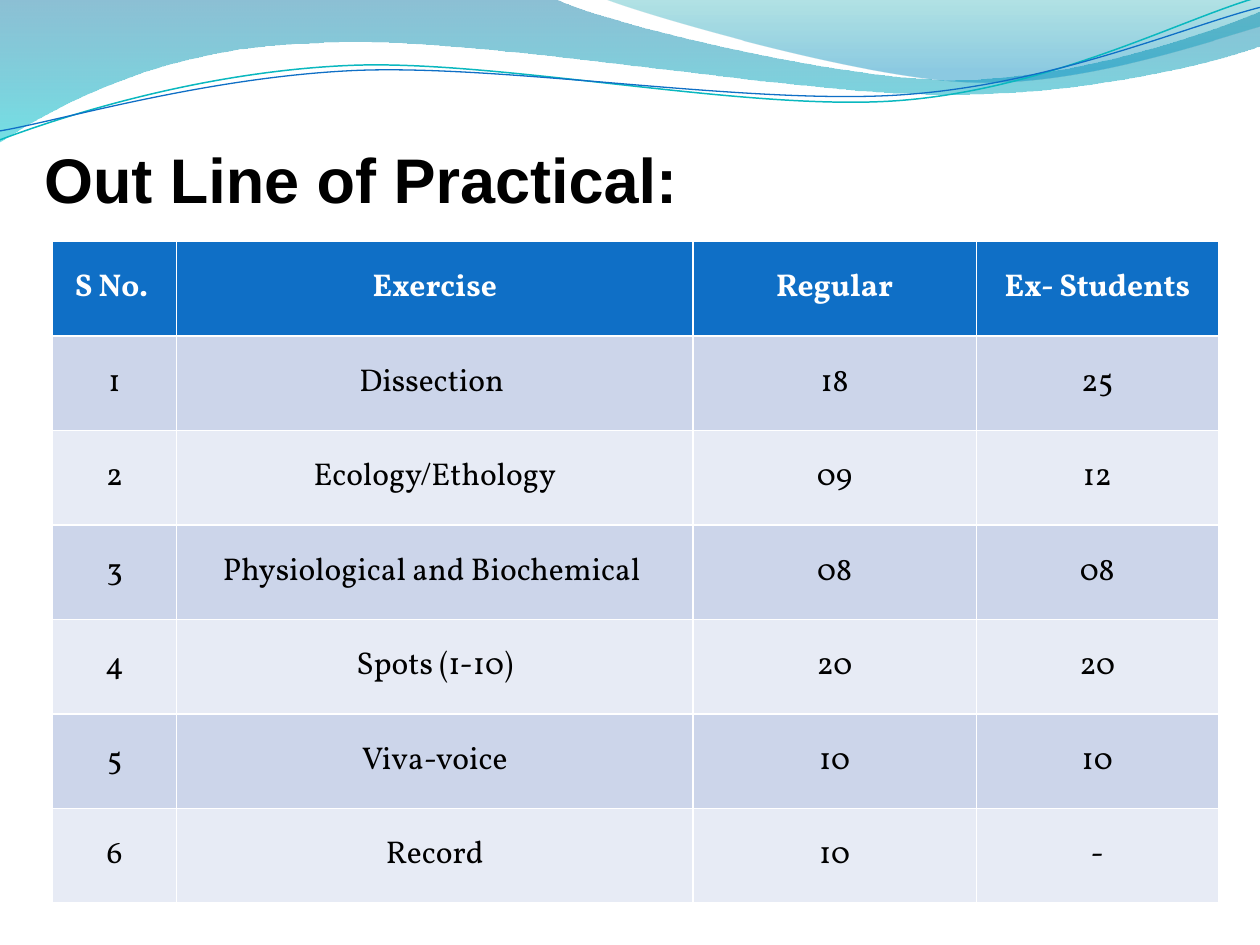
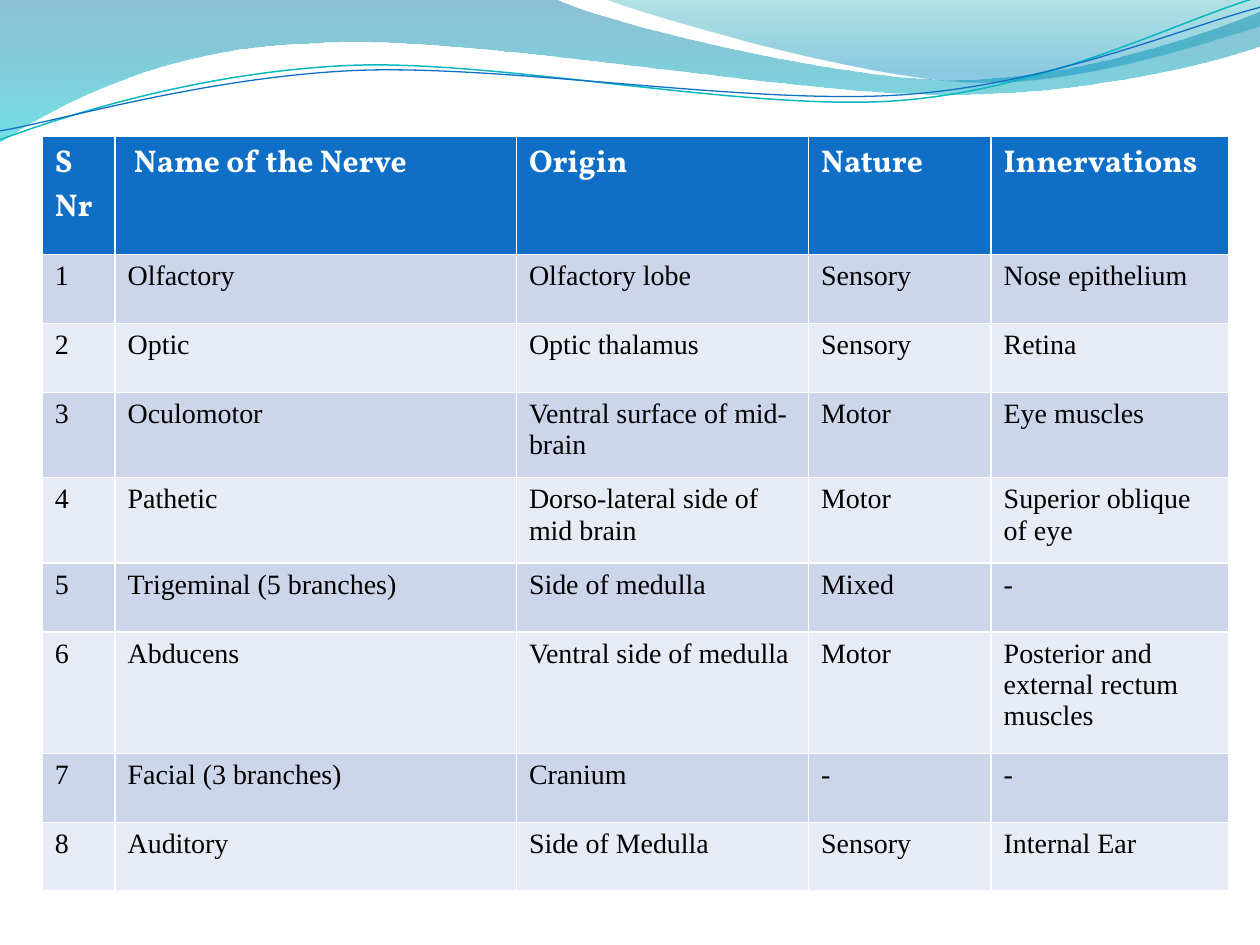
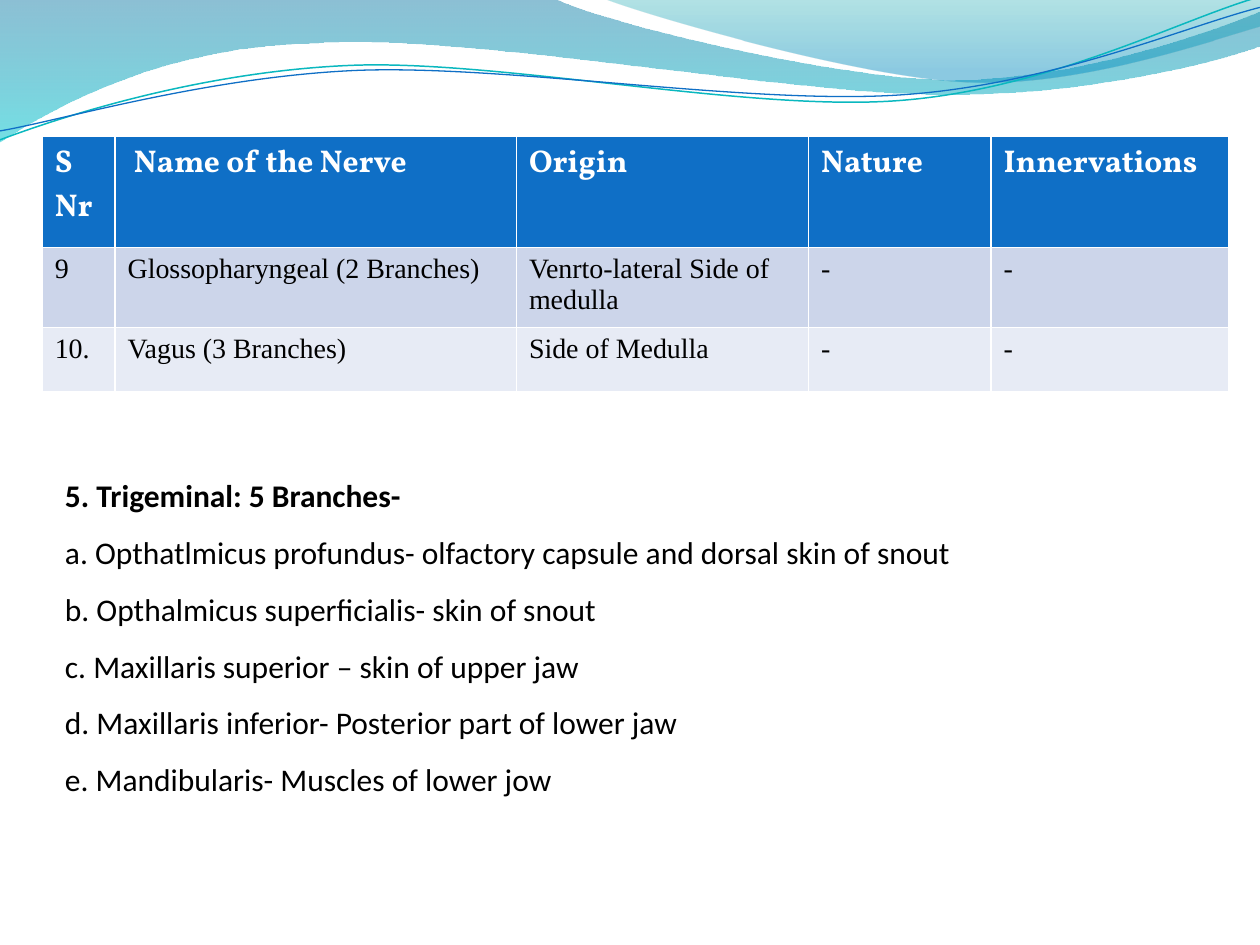
"""Builds three zoology practical slides: a marks outline and two cranial nerve tables."""
from pptx import Presentation
from pptx.dml.color import RGBColor
from pptx.enum.text import MSO_ANCHOR as Anchor, PP_ALIGN as Align
from pptx.oxml import parse_xml
from pptx.oxml.ns import nsdecls, qn
from pptx.util import Cm, Pt

BLUE, TEAL, WHITE, BLACK = "0F6FC6", "0AB8BF", "FFFFFF", "000000"
BANDS = ("CCD5EA", "E7EBF5")
SERIF = "Vollkorn"

BACK = [(0, 0), (11.18, -0.03),
        (12.09, 0.43, 16.87, 1.6, 19.25, 1.6),
        (21.67, 1.6, 24.33, 0.66, 25.4, 0.23), (25.43, 0.91),
        (24.97, 1.12, 22.1, 1.93, 18.95, 1.9),
        (15.8, 1.9, 9.7, 0.71, 6.53, 0.86),
        (3.28, 0.91, 1.17, 2.11, -0.03, 2.87), (0, 0)]
FRONT = [(12.17, -0.03),
         (12.93, 0.28, 17.32, 1.57, 19.53, 1.65),
         (21.74, 1.75, 24.41, 0.81, 25.4, 0.53), (25.4, 0), (12.17, -0.03)]
UPPER = [(0, 2.82),
         (1.22, 2.36, 4.01, 1.45, 7.04, 1.32),
         (10.03, 1.19, 15.06, 2.26, 18.11, 2.03),
         (21.16, 1.8, 23.83, 0.38, 25.35, -0.05)]
LOWER = [(0, 2.64),
         (1.19, 2.44, 4.17, 1.55, 7.19, 1.42),
         (10.24, 1.3, 15.16, 2.13, 18.21, 1.91),
         (21.23, 1.7, 23.9, 0.53, 25.4, 0.15)]
FILLS = [(BACK, [(0, "0074A1", 45), (1, "00C6CF", 55)]),
         (FRONT, [(0, "00A1A9", 30), (0.8, "008BBF", 45)])]
LINES = [(UPPER, TEAL, 0.85), (LOWER, BLUE, 0.75)]

TITLE = "Out Line of Practical:"
MARKS = [
    ("S No. ", "Exercise", "Regular", "Ex- Students"),
    ("1", "Dissection ", "18", "25"),
    ("2", "Ecology/Ethology", "09", "12"),
    ("3", "Physiological and Biochemical ", "08", "08"),
    ("4", "Spots (1-10)", "20", "20"),
    ("5", "Viva-voice", "10", "10"),
    ("6", "Record", "10", "-"),
]
HEAD = ("S Nr", " Name of the Nerve", "Origin", "Nature", "Innervations")
NERVES = [
    ("1", "Olfactory", "Olfactory lobe", "Sensory", "Nose epithelium"),
    ("2", "Optic", "Optic thalamus", "Sensory", "Retina"),
    ("3", "Oculomotor", "Ventral surface of mid-brain", "Motor", "Eye muscles"),
    ("4", "Pathetic", "Dorso-lateral side of mid brain", "Motor", "Superior oblique of eye"),
    ("5", "Trigeminal (5 branches)", "Side of medulla", "Mixed", "-"),
    ("6", "Abducens", "Ventral side of medulla", "Motor",
     "Posterior and external rectum muscles"),
    ("7", "Facial (3 branches)", "Cranium", "-", "-"),
    ("8", "Auditory", "Side of Medulla", "Sensory", "Internal Ear"),
]
REST = [
    ("9", "Glossopharyngeal (2 Branches)", "Venrto-lateral Side of medulla", "-", "-"),
    ("10.", "Vagus (3 Branches)", "Side of Medulla", "-", "-"),
]
NOTES = [
    "5. Trigeminal: 5 Branches-",
    "a. Opthatlmicus profundus- olfactory capsule and dorsal skin of snout",
    "b. Opthalmicus superficialis- skin of snout",
    "c. Maxillaris superior – skin of upper jaw",
    "d. Maxillaris inferior- Posterior part of lower jaw",
    "e. Mandibularis- Muscles of lower jow",
]
MARK_COLS = (2.5, 10.41, 5.71, 4.88)
MARK_ROWS = [13.34 / len(MARKS)] * len(MARKS)
NERVE_COLS = (1.47, 8.09, 5.89, 3.68, 4.78)
NERVE_ROWS = (2.38, 1.39, 1.39, 1.72, 1.72, 1.39, 2.45, 1.39, 1.39)
REST_ROWS = (2.24, 1.3, 1.3)


def hue(code):
    return RGBColor.from_string(code)


def style(para, face, size, code, bold=False, align=None):
    para.alignment = align
    font = para.font
    font.name, font.size, font.bold = face, Pt(size), bold
    font.color.rgb = hue(code)


def outline(slide, steps, close):
    spots = [(Cm(step[n]), Cm(step[n + 1]))
             for step in steps for n in range(0, len(step), 2)]
    pen = slide.shapes.build_freeform(*spots[0])
    pen.add_line_segments(spots[1:], close=close)
    shape = pen.convert_to_shape()
    shape.shadow.inherit = False
    nodes = iter(list(shape.element.iter(qn("a:lnTo"))))
    for step in steps[1:]:
        first = next(nodes)
        if len(step) == 6:
            first.tag = qn("a:cubicBezTo")
            for _ in range(2):
                node = next(nodes)
                first.append(node[0])
                node.getparent().remove(node)
    return shape


def add_waves(slide, layout):
    for old in list(layout.placeholders):
        layout.shapes.element.remove(old.element)
    waves = []
    for steps, stops in FILLS:
        wave = outline(slide, steps, True)
        wave.line.fill.background()
        wave.fill.gradient()
        wave.fill.gradient_angle = 270
        for stop, (place, code, _) in zip(wave.fill.gradient_stops, stops):
            stop.position = place
            stop.color.rgb = hue(code)
        tints = wave.element.spPr.iter(qn("a:srgbClr"))
        for tint, (_, _, solid) in zip(tints, stops):
            tint.append(parse_xml(f'<a:alpha {nsdecls("a")} val="{solid * 1000}"/>'))
        waves.append(wave)
    for steps, code, width in LINES:
        wave = outline(slide, steps, False)
        wave.fill.background()
        wave.line.color.rgb = hue(code)
        wave.line.width = Pt(width)
        waves.append(wave)
    for wave in waves:
        layout.shapes.element.append(wave.element)


def add_grid(slide, left, top, cols, rows, data, face, size, center=False):
    grid = slide.shapes.add_table(len(rows), len(cols), Cm(left), Cm(top),
                                  Cm(sum(cols)), Cm(sum(rows))).table
    for col, width in zip(grid.columns, cols):
        col.width = Cm(width)
    for r, (row, high) in enumerate(zip(data, rows)):
        grid.rows[r].height = Cm(high)
        for c, text in enumerate(row):
            cell = grid.cell(r, c)
            cell.fill.solid()
            cell.fill.fore_color.rgb = hue(BANDS[(r - 1) % 2] if r else BLUE)
            cell.text = text
            look = (face, size, BLACK) if r else (SERIF, 18, WHITE, True)
            para = cell.text_frame.paragraphs[0]
            style(para, *look)
            if center:
                para.alignment = Align.CENTER
                cell.vertical_anchor = Anchor.MIDDLE


def add_box(slide, left, top, width, high, lines):
    frame = slide.shapes.add_textbox(Cm(left), Cm(top), Cm(width), Cm(high)).text_frame
    frame.word_wrap = True
    frame.text = "\n".join(lines)
    return frame


def main():
    deck = Presentation()
    deck.slide_width, deck.slide_height = Cm(25.4), Cm(19.05)
    blank = deck.slide_layouts[6]
    marks, nerves, rest = [deck.slides.add_slide(blank) for _ in range(3)]
    add_waves(marks, blank)

    frame = add_box(marks, 0.64, 2.97, 23.5, 1.27, [TITLE])
    frame.vertical_anchor = Anchor.MIDDLE
    style(frame.paragraphs[0], "Arial", 36, BLACK, True)
    add_grid(marks, 1.06, 4.87, MARK_COLS, MARK_ROWS, MARKS, SERIF, 18, True)

    for slide, rows, data in ((nerves, NERVE_ROWS, NERVES), (rest, REST_ROWS, REST)):
        add_grid(slide, 0.85, 2.75, NERVE_COLS, rows, [HEAD] + data, "Times New Roman", 16)

    frame = add_box(rest, 1.06, 9.1, 23.29, 7.04, NOTES)
    for n, para in enumerate(frame.paragraphs):
        style(para, "Calibri", 18, BLACK, n == 0, Align.JUSTIFY)
        para.line_spacing = 1.5
    deck.save("out.pptx")


if __name__ == "__main__":
    main()
